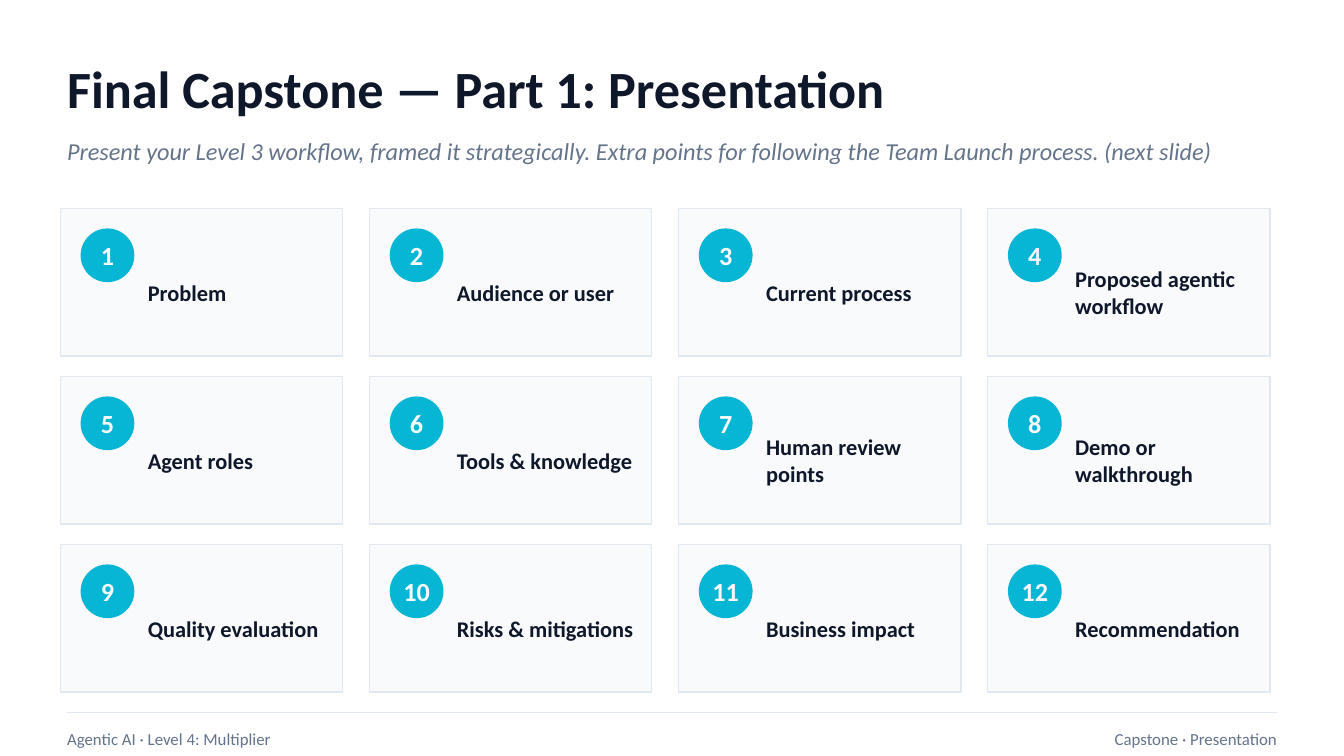
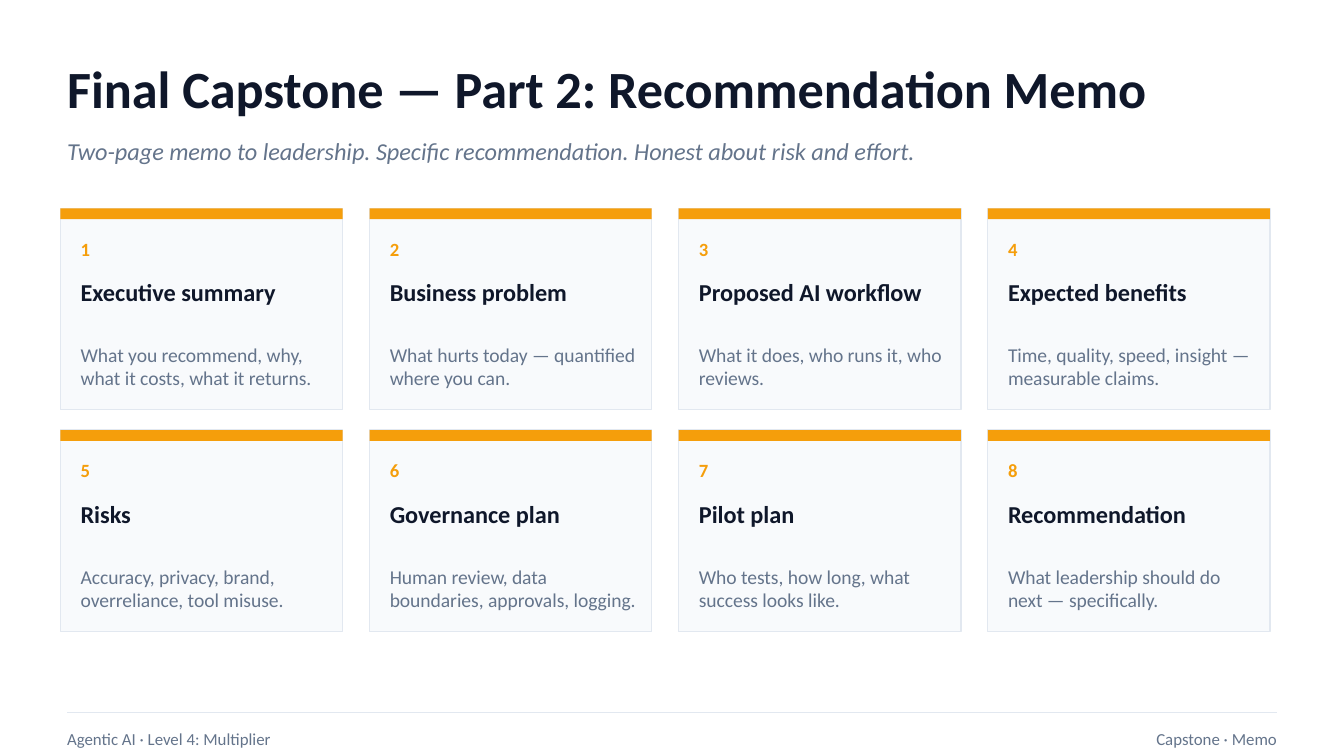
"""Builds two capstone slides: a grid of numbered steps and a grid of memo sections."""
from lxml.etree import SubElement
from pptx import Presentation
from pptx.dml.color import RGBColor
from pptx.enum.shapes import MSO_CONNECTOR as LINK, MSO_SHAPE as SHAPE
from pptx.enum.text import MSO_ANCHOR as ANCHOR, MSO_AUTO_SIZE as FIT, PP_ALIGN as ALIGN
from pptx.oxml.ns import qn
from pptx.util import Pt

STEPS = {
    "title": "Final Capstone — Part 1: Presentation",
    "lead": "Present your Level 3 workflow, framed it strategically. "
            "Extra points for following the Team Launch process. (next slide)",
    "foot": "Capstone · Presentation",
    "cards": [
        "Problem", "Audience or user", "Current process", "Proposed agentic workflow",
        "Agent roles", "Tools & knowledge", "Human review points", "Demo or walkthrough",
        "Quality evaluation", "Risks & mitigations", "Business impact", "Recommendation",
    ],
}
MEMO = {
    "title": "Final Capstone — Part 2: Recommendation Memo",
    "lead": "Two-page memo to leadership. Specific recommendation. Honest about risk and effort.",
    "foot": "Capstone · Memo",
    "cards": [
        ("Executive summary", "What you recommend, why, what it costs, what it returns."),
        ("Business problem", "What hurts today — quantified where you can."),
        ("Proposed AI workflow", "What it does, who runs it, who reviews."),
        ("Expected benefits", "Time, quality, speed, insight — measurable claims."),
        ("Risks", "Accuracy, privacy, brand, overreliance, tool misuse."),
        ("Governance plan", "Human review, data boundaries, approvals, logging."),
        ("Pilot plan", "Who tests, how long, what success looks like."),
        ("Recommendation", "What leadership should do next — specifically."),
    ],
}
COURSE = "Agentic AI · Level 4: Multiplier"

INK, GREY, PALE, RULE = "0F172A", "64748B", "F8FAFC", "E2E8F0"
CYAN, AMBER = "06B6D4", "F59E0B"
STYLES = {
    "title": (INK, {"size": Pt(28), "bold": True}),
    "lead": (GREY, {"size": Pt(13), "italic": True}),
    "badge": (PALE, {"size": Pt(14), "bold": True}),
    "step": (INK, {"size": Pt(12), "bold": True}),
    "count": (AMBER, {"size": Pt(10), "bold": True}),
    "head": (INK, {"size": Pt(13), "bold": True}),
    "note": (GREY, {"size": Pt(10.5)}),
    "foot": (GREY, {"size": Pt(9)}),
}

PX = 4572
COLS, LEFT, TOP, WIDE = 4, 90, 310, 420
GAP_X, GAP_Y, PAD = 40, 30, 30
EDGE, SPAN = 100, 1800


def px(*nums):
    return [n * PX for n in nums]


def color(code):
    return RGBColor.from_string(code)


def write(shape, words, style, align=ALIGN.LEFT):
    frame = shape.text_frame
    look = {"word_wrap": True, "auto_size": FIT.NONE, "vertical_anchor": ANCHOR.MIDDLE,
            "margin_left": 0, "margin_top": 0, "margin_right": 0, "margin_bottom": 0}
    for name, value in look.items():
        setattr(frame, name, value)
    para = frame.paragraphs[0]
    para.alignment = align
    run = para.add_run()
    run.text = words
    code, form = STYLES[style]
    for name, value in {"name": "Calibri", **form}.items():
        setattr(run.font, name, value)
    run.font.color.rgb = color(code)
    return run


def label(slide, box, words, style, align=ALIGN.LEFT):
    return write(slide.shapes.add_textbox(*px(*box)), words, style, align)


def block(slide, kind, box, fill, line=None):
    shape = slide.shapes.add_shape(kind, *px(*box))
    shape.shadow.inherit = False
    shape.fill.solid()
    shape.fill.fore_color.rgb = color(fill)
    if line:
        shape.line.color.rgb = color(line)
        shape.line.width = Pt(0.75)
    else:
        shape.line.fill.background()
    return shape


def step(slide, num, x, y, words):
    badge = block(slide, SHAPE.OVAL, (x + PAD, y + PAD, 80, 80), CYAN)
    write(badge, str(num), "badge", ALIGN.CENTER)
    label(slide, (x + 130, y + 40, 280, 170), words, "step")


def part(slide, num, x, y, words):
    head, note = words
    block(slide, SHAPE.RECTANGLE, (x, y, WIDE, 16), AMBER)
    rows = ((30, 60, str(num), "count"), (84, 80, head, "head"), (170, 130, note, "note"))
    for down, high, line, style in rows:
        run = label(slide, (x + PAD, y + down, 370, high), line, style)
        if style == "count":
            run.font.bold = True
            run._r.get_or_add_rPr().set("spc", "200")


def frame(deck, page):
    slide = deck.slides.add_slide(deck.slide_layouts[5])
    title = slide.shapes.title
    title.left, title.top, title.width, title.height = px(EDGE, 70, SPAN, 120)
    write(title, page["title"], "title")
    label(slide, (EDGE, 190, SPAN, 70), page["lead"], "lead")
    rule = slide.shapes.add_connector(LINK.STRAIGHT, *px(EDGE, 1060, EDGE + SPAN, 1060))
    rule.line.color.rgb = color(RULE)
    rule.line.width = Pt(0.75)
    SubElement(rule._element.spPr, qn("a:effectLst"))
    label(slide, (EDGE, 1070, 1000, 60), COURSE, "foot")
    label(slide, (1100, 1070, 800, 60), page["foot"], "foot", ALIGN.RIGHT)
    return slide


def grid(slide, cards, high, draw):
    for i, words in enumerate(cards):
        row, col = divmod(i, COLS)
        x, y = LEFT + col * (WIDE + GAP_X), TOP + row * (high + GAP_Y)
        block(slide, SHAPE.RECTANGLE, (x, y, WIDE, high), PALE, RULE)
        draw(slide, i + 1, x, y, words)


def main():
    deck = Presentation()
    deck.slide_width, deck.slide_height = px(2000, 1125)
    for page, high, draw in ((STEPS, 220, step), (MEMO, 300, part)):
        grid(frame(deck, page), page["cards"], high, draw)
    deck.save("out.pptx")


if __name__ == "__main__":
    main()
